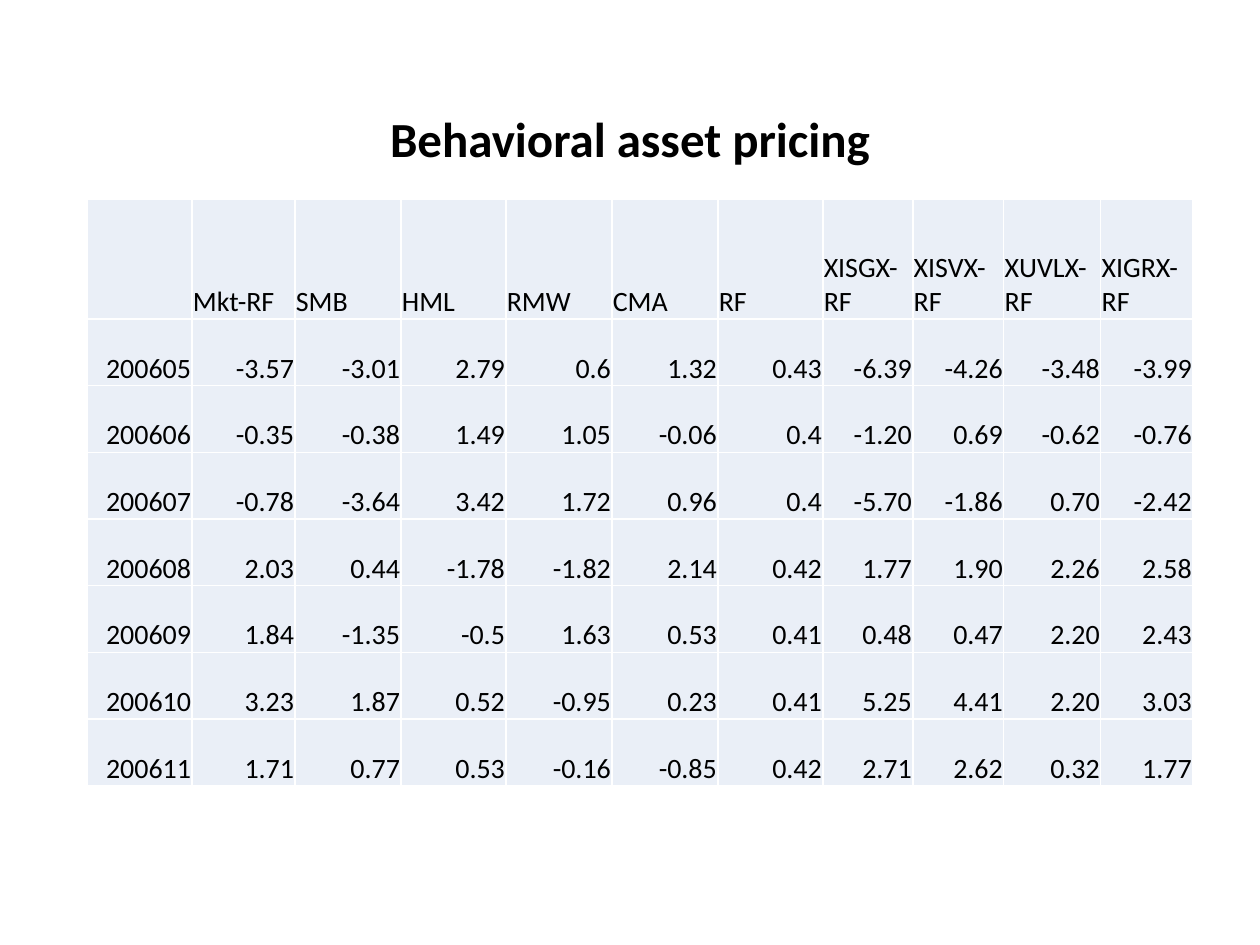
from pptx import Presentation
from pptx.dml.color import RGBColor
from pptx.enum.text import MSO_ANCHOR, PP_ALIGN
from pptx.util import Pt

LEFT, CENTER, RIGHT = PP_ALIGN.LEFT, PP_ALIGN.CENTER, PP_ALIGN.RIGHT
MIDDLE, BOTTOM = MSO_ANCHOR.MIDDLE, MSO_ANCHOR.BOTTOM

TITLE = "Behavioral asset pricing"
FACTORS = ["", "Mkt-RF", "SMB", "HML", "RMW", "CMA", "RF",
           "XISGX-RF", "XISVX-RF", "XUVLX-RF", "XIGRX-RF"]
MONTHS = [
    ["200605", "-3.57", "-3.01", "2.79", "0.6", "1.32", "0.43", "-6.39", "-4.26", "-3.48", "-3.99"],
    ["200606", "-0.35", "-0.38", "1.49", "1.05", "-0.06", "0.4", "-1.20", "0.69", "-0.62", "-0.76"],
    ["200607", "-0.78", "-3.64", "3.42", "1.72", "0.96", "0.4", "-5.70", "-1.86", "0.70", "-2.42"],
    ["200608", "2.03", "0.44", "-1.78", "-1.82", "2.14", "0.42", "1.77", "1.90", "2.26", "2.58"],
    ["200609", "1.84", "-1.35", "-0.5", "1.63", "0.53", "0.41", "0.48", "0.47", "2.20", "2.43"],
    ["200610", "3.23", "1.87", "0.52", "-0.95", "0.23", "0.41", "5.25", "4.41", "2.20", "3.03"],
    ["200611", "1.71", "0.77", "0.53", "-0.16", "-0.85", "0.42", "2.71", "2.62", "0.32", "1.77"],
]
COLUMN_WIDTHS = [105, 103, 106, 105, 106, 106, 105, 90, 91, 97, 92]
TABLE_LEFT, TABLE_TOP, TABLE_HEIGHT, HEADER_HEIGHT = 87, 199, 587, 120
FONT, INK, CELL_FILL = "Calibri", "000000", "EAEFF7"
PX_PER_INCH = 126


def px(length):
    return round(length * 914400 / PX_PER_INCH)


def color(value):
    return RGBColor.from_string(value)


def format_text(paragraph, size, alignment, bold=False):
    paragraph.alignment = alignment
    for run in paragraph.runs:
        run.font.name = FONT
        run.font.size = Pt(size)
        run.font.bold = bold
        run.font.color.rgb = color(INK)


def add_title(slide):
    title = slide.shapes.title
    title.left, title.top, title.width, title.height = map(px, (87, 50, 1086, 183))
    title.text_frame.text = TITLE
    title.text_frame.vertical_anchor = MIDDLE
    heading = title.text_frame.paragraphs[0]
    heading.line_spacing = 0.9
    format_text(heading, 28, CENTER, bold=True)


def fill_cell(cell, value, alignment):
    cell.text = value
    cell.vertical_anchor = BOTTOM
    cell.margin_left = cell.margin_right = cell.margin_top = px(1)
    cell.margin_bottom = 0
    cell.fill.solid()
    cell.fill.fore_color.rgb = color(CELL_FILL)
    format_text(cell.text_frame.paragraphs[0], 16, alignment)


def add_returns(slide):
    records = [FACTORS] + MONTHS
    returns = slide.shapes.add_table(
        len(records), len(FACTORS), px(TABLE_LEFT), px(TABLE_TOP),
        px(sum(COLUMN_WIDTHS)), px(TABLE_HEIGHT)).table
    returns.first_row = False
    returns.horz_banding = False
    for column, width in zip(returns.columns, COLUMN_WIDTHS):
        column.width = px(width)
    month_height = (TABLE_HEIGHT - HEADER_HEIGHT) / len(MONTHS)
    for r, record in enumerate(records):
        returns.rows[r].height = px(month_height if r else HEADER_HEIGHT)
        for c, value in enumerate(record):
            fill_cell(returns.cell(r, c), value, RIGHT if r else LEFT)


def main():
    deck = Presentation()
    deck.slide_width, deck.slide_height = px(1260), px(945)
    slide = deck.slides.add_slide(deck.slide_layouts[5])
    add_title(slide)
    add_returns(slide)
    deck.save("out.pptx")


if __name__ == "__main__":
    main()
